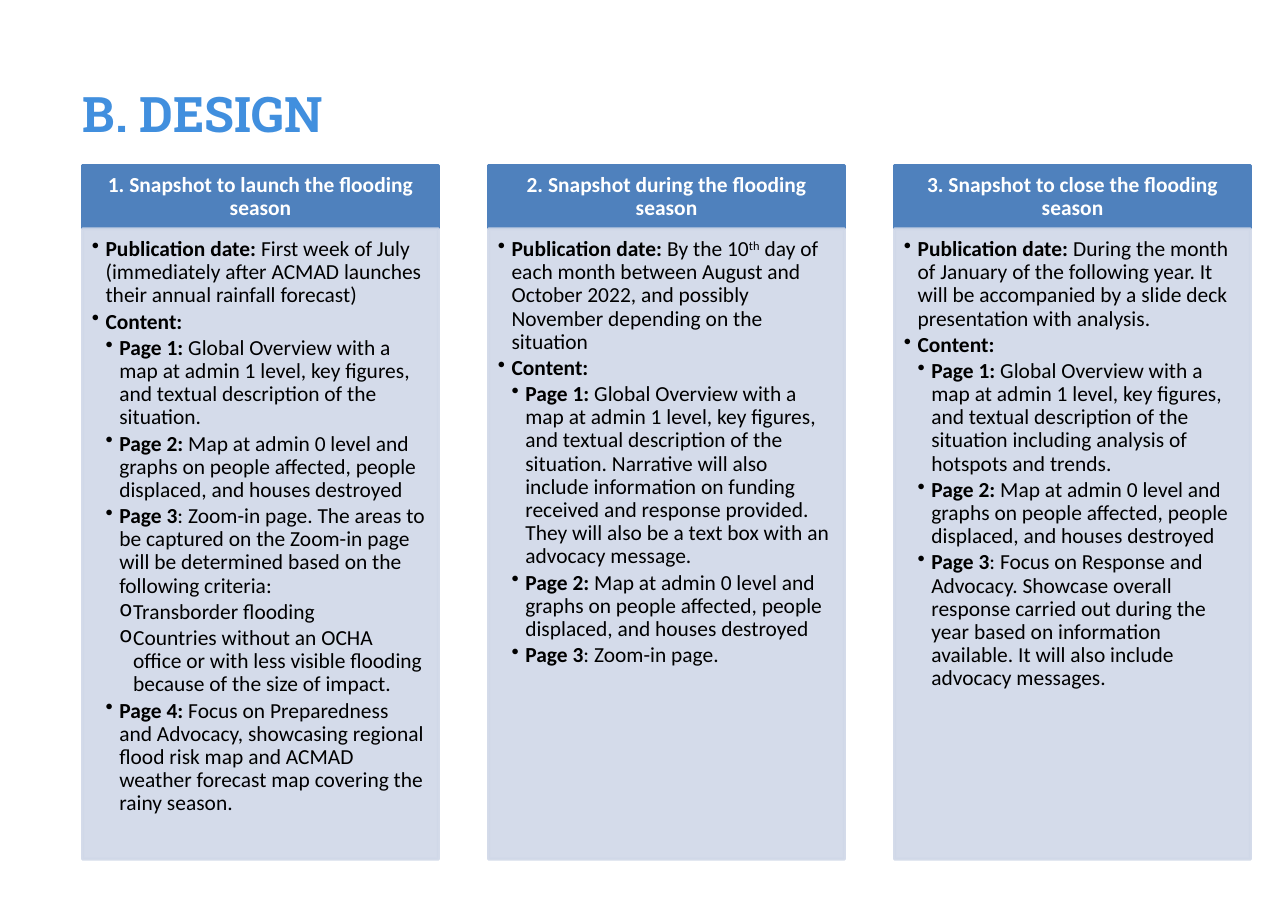
from dataclasses import dataclass

from lxml.etree import SubElement
from pptx import Presentation
from pptx.dml.color import RGBColor
from pptx.enum.shapes import MSO_SHAPE as Preset
from pptx.enum.text import MSO_ANCHOR as Anchor, PP_ALIGN as Align
from pptx.oxml.ns import qn
from pptx.shapes.autoshape import Shape
from pptx.slide import Slide
from pptx.text.text import TextFrame, _Paragraph as Paragraph
from pptx.util import Pt


@dataclass(frozen=True)
class Theme:
    title_color: str = "418FDE"
    header_color: str = "4F81BD"
    body_color: str = "D0D8E8"
    header_text: str = "FFFFFF"
    body_text: str = "000000"
    body_opacity: int = 90
    title_font: str = "Roboto Slab"
    text_font: str = "Calibri"
    title_size: float = 32
    text_size: float = 14
    line_width: float = 2
    line_spacing: float = 0.9
    bullet_gap: float = 2
    indent: float = 9


@dataclass(frozen=True)
class Box:
    left: float
    top: float
    width: float
    height: float


@dataclass(frozen=True)
class Bullet:
    """A list item: bold lead, then plain text with superscripts between carets."""
    level: int
    lead: str
    text: str = ""
    symbol: str = "•"


@dataclass(frozen=True)
class Snapshot:
    heading: str
    bullets: tuple[Bullet, ...]


THEME = Theme()
SLIDE_WIDTH, SLIDE_HEIGHT = 841.68, 595.44
TITLE_BOX = Box(54, 54.72, 735.84, 72)
COLUMN_LEFT, COLUMN_PITCH, COLUMN_WIDTH = 54, 265.32, 232.56
HEADER_TOP, HEADER_HEIGHT = 108, 41.3
BODY_TOP, BODY_HEIGHT = 149.6, 412
HEADER_INSETS = (8, 4.5, 8, 4.5)
BODY_INSETS = (6, 6, 8, 9)

OVERVIEW = (" Global Overview with a map at admin 1 level, key figures, "
            "and textual description of the situation")
CONTENT = Bullet(1, "Content:")
PAGE_2 = Bullet(2, "Page 2:", " Map at admin 0 level and graphs on people affected, "
                "people displaced, and houses destroyed")

SNAPSHOTS = (
    Snapshot("1. Snapshot to launch the flooding season", (
        Bullet(1, "Publication date: ", "First week of July (immediately after ACMAD "
               "launches their annual rainfall forecast)"),
        CONTENT,
        Bullet(2, "Page 1:", OVERVIEW + "."),
        PAGE_2,
        Bullet(2, "Page 3", ": Zoom-in page. The areas to be captured on the Zoom-in page "
               "will be determined based on the following criteria:"),
        Bullet(3, "", "Transborder flooding", "o"),
        Bullet(3, "", "Countries without an OCHA office or with less visible flooding "
               "because of the size of impact.", "o"),
        Bullet(2, "Page 4:", " Focus on Preparedness and Advocacy, showcasing regional "
               "flood risk map and ACMAD weather forecast map covering the rainy season."),
    )),
    Snapshot("2. Snapshot during the flooding season", (
        Bullet(1, "Publication date: ", "By the 10^th^ day of each month between August "
               "and October 2022, and possibly November depending on the situation"),
        CONTENT,
        Bullet(2, "Page 1:", OVERVIEW + ". Narrative will also include information on "
               "funding received and response provided. They will also be a text box "
               "with an advocacy message."),
        PAGE_2,
        Bullet(2, "Page 3", ": Zoom-in page."),
    )),
    Snapshot("3. Snapshot to close the flooding season", (
        Bullet(1, "Publication date: ", "During the month of January of the following year. "
               "It will be accompanied by a slide deck presentation with analysis."),
        CONTENT,
        Bullet(2, "Page 1:", OVERVIEW + " including analysis of hotspots and trends."),
        PAGE_2,
        Bullet(2, "Page 3", ": Focus on Response and Advocacy. Showcase overall response "
               "carried out during the year based on information available. It will also "
               "include advocacy messages."),
    )),
)


def add_run(paragraph: Paragraph, text: str, color: str, bold: bool = False,
            name: str = THEME.text_font, size: float = THEME.text_size,
            superscript: bool = False) -> None:
    run = paragraph.add_run()
    run.text = text
    for attribute, value in {"name": name, "size": Pt(size), "bold": bold}.items():
        setattr(run.font, attribute, value)
    run.font.color.rgb = RGBColor.from_string(color)
    if superscript:
        run._r.get_or_add_rPr().set("baseline", "30000")


def format_frame(frame: TextFrame, insets: tuple[float, ...], anchor: Anchor) -> None:
    left, top, right, bottom = map(Pt, insets)
    settings = {"word_wrap": True, "vertical_anchor": anchor, "margin_left": left,
                "margin_top": top, "margin_right": right, "margin_bottom": bottom}
    for attribute, value in settings.items():
        setattr(frame, attribute, value)


def add_panel(slide: Slide, box: Box, color: str, opacity: int = 100) -> Shape:
    """Add a rectangle whose fill and outline share one colour and opacity."""
    panel = slide.shapes.add_shape(Preset.RECTANGLE, Pt(box.left), Pt(box.top),
                                   Pt(box.width), Pt(box.height))
    panel.shadow.inherit = False
    panel.line.width = Pt(THEME.line_width)
    for fill in (panel.fill, panel.line.fill):
        fill.solid()
        fill.fore_color.rgb = RGBColor.from_string(color)
    if opacity < 100:
        for color_element in panel._element.spPr.iter(qn("a:srgbClr")):
            SubElement(color_element, qn("a:alpha"), val=str(opacity * 1000))
    return panel


def add_title(slide: Slide, text: str) -> None:
    box = TITLE_BOX
    title = slide.shapes.add_textbox(Pt(box.left), Pt(box.top), Pt(box.width), Pt(box.height))
    format_frame(title.text_frame, (0, 0, 0, 0), Anchor.TOP)
    add_run(title.text_frame.paragraphs[0], text, THEME.title_color, True,
            THEME.title_font, THEME.title_size)


def add_header(slide: Slide, box: Box, heading: str) -> None:
    frame = add_panel(slide, box, THEME.header_color).text_frame
    format_frame(frame, HEADER_INSETS, Anchor.MIDDLE)
    paragraph = frame.paragraphs[0]
    paragraph.alignment = Align.CENTER
    paragraph.line_spacing = THEME.line_spacing
    add_run(paragraph, heading, THEME.header_text, True)


def write_bullet(paragraph: Paragraph, bullet: Bullet) -> None:
    settings = {"alignment": Align.LEFT, "level": bullet.level,
                "line_spacing": THEME.line_spacing, "space_before": Pt(0),
                "space_after": Pt(THEME.bullet_gap)}
    for attribute, value in settings.items():
        setattr(paragraph, attribute, value)
    properties = paragraph._p.get_or_add_pPr()
    properties.set("marL", str(Pt(THEME.indent * bullet.level)))
    properties.set("indent", str(Pt(-THEME.indent)))
    SubElement(properties, qn("a:buChar"), char=bullet.symbol)
    if bullet.lead:
        add_run(paragraph, bullet.lead, THEME.body_text, True)
    if bullet.text:
        for index, part in enumerate(bullet.text.split("^")):
            add_run(paragraph, part, THEME.body_text, superscript=index % 2 == 1)


def add_body(slide: Slide, box: Box, bullets: tuple[Bullet, ...]) -> None:
    frame = add_panel(slide, box, THEME.body_color, THEME.body_opacity).text_frame
    format_frame(frame, BODY_INSETS, Anchor.TOP)
    for index, bullet in enumerate(bullets):
        write_bullet(frame.add_paragraph() if index else frame.paragraphs[0], bullet)


def main() -> None:
    presentation = Presentation()
    presentation.slide_width, presentation.slide_height = Pt(SLIDE_WIDTH), Pt(SLIDE_HEIGHT)
    slide = presentation.slides.add_slide(presentation.slide_layouts[6])
    add_title(slide, "B. DESIGN")
    for column, snapshot in enumerate(SNAPSHOTS):
        left = COLUMN_LEFT + column * COLUMN_PITCH
        add_header(slide, Box(left, HEADER_TOP, COLUMN_WIDTH, HEADER_HEIGHT), snapshot.heading)
        add_body(slide, Box(left, BODY_TOP, COLUMN_WIDTH, BODY_HEIGHT), snapshot.bullets)
    presentation.save("out.pptx")


if __name__ == "__main__":
    main()
